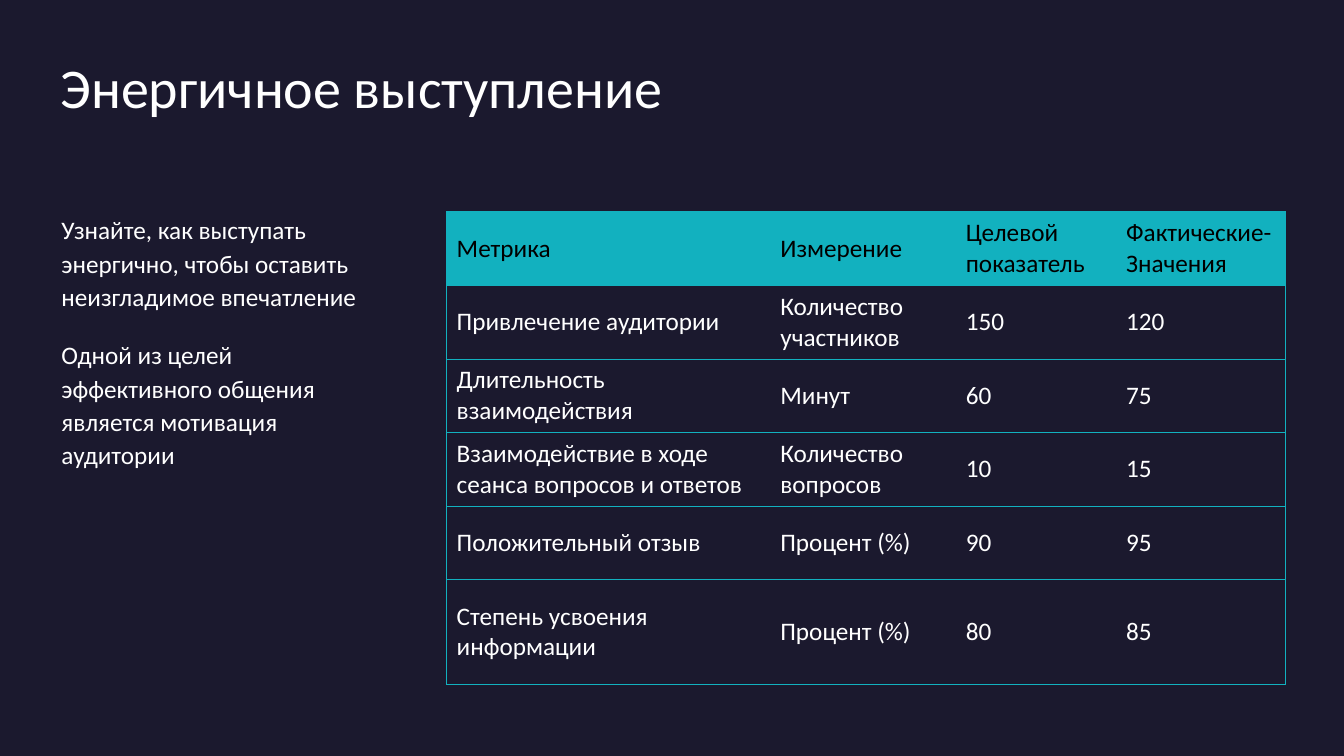
"""Build the slide on energetic delivery with its table of audience metrics."""
from lxml.etree import SubElement
from pptx import Presentation
from pptx.dml.color import RGBColor
from pptx.enum.text import MSO_ANCHOR, MSO_AUTO_SIZE, PP_ALIGN
from pptx.oxml.ns import qn
from pptx.util import Inches, Pt

HEADING = "Энергичное выступление"
ADVICE = [
    "Узнайте, как выступать энергично, чтобы оставить неизгладимое впечатление",
    "Одной из целей эффективного общения является мотивация аудитории",
]
METRICS = [
    ("Метрика", "Измерение", "Целевой показатель", "Фактические-Значения"),
    ("Привлечение аудитории", "Количество участников", "150", "120"),
    ("Длительность взаимодействия", "Минут", "60", "75"),
    ("Взаимодействие в ходе сеанса вопросов и ответов", "Количество вопросов", "10", "15"),
    ("Положительный отзыв", "Процент (%)", "90", "95"),
    ("Степень усвоения информации", "Процент (%)", "80", "85"),
]
COLUMN_WIDTHS = [3.21, 1.84, 1.59, 1.68]
ROW_HEIGHTS = [0.73] * 5 + [1.04]
FONT = "Calibri"
NIGHT, TEAL, WHITE, BLACK = "1B192E", "12B1BF", "FFFFFF", "000000"


def color(value):
    return RGBColor.from_string(value)


def write(paragraph, text, size, ink):
    run = paragraph.add_run()
    run.text = text
    run.font.name = FONT
    run.font.size = Pt(size)
    run.font.bold = False
    run.font.color.rgb = color(ink)


def place(placeholder, left, top, width, height, right_inset=0, bottom_inset=0):
    placeholder.left, placeholder.top = Inches(left), Inches(top)
    placeholder.width, placeholder.height = Inches(width), Inches(height)
    frame = placeholder.text_frame
    frame.margin_left = frame.margin_top = 0
    frame.margin_right, frame.margin_bottom = Inches(right_inset), Inches(bottom_inset)
    frame.vertical_anchor = MSO_ANCHOR.TOP
    frame.auto_size = MSO_AUTO_SIZE.NONE
    frame.word_wrap = True
    return frame


def set_borders(cell, left, right):
    properties = cell._tc.get_or_add_tcPr()
    for side, visible in (("L", left), ("R", right), ("T", True), ("B", True)):
        line = SubElement(properties, qn(f"a:ln{side}"), w=str(Pt(0.5)))
        if visible:
            fill = SubElement(line, qn("a:solidFill"))
            SubElement(fill, qn("a:srgbClr"), val=TEAL)
        else:
            SubElement(line, qn("a:noFill"))


def add_heading(slide):
    paragraph = place(slide.shapes.title, 0.6, 0.6, 12.13, 1.35).paragraphs[0]
    paragraph.alignment = PP_ALIGN.LEFT
    paragraph.line_spacing = 0.9
    write(paragraph, HEADING, 40, WHITE)


def add_advice(slide):
    frame = place(slide.placeholders[1], 0.61, 2.1, 3.19, 4.7, 0.1, 0.05)
    for index, text in enumerate(ADVICE):
        paragraph = frame.add_paragraph() if index else frame.paragraphs[0]
        properties = paragraph._p.get_or_add_pPr()
        properties.set("marL", "0")
        properties.set("indent", "0")
        SubElement(properties, qn("a:buNone"))
        paragraph.line_spacing = 1.1
        paragraph.space_before = Pt(10 if index else 0)
        paragraph.space_after = Pt(8)
        write(paragraph, text, 18, WHITE)


def add_metrics(slide):
    table = slide.shapes.add_table(
        len(METRICS), len(COLUMN_WIDTHS), Inches(4.43), Inches(2.1),
        Inches(sum(COLUMN_WIDTHS)), Inches(sum(ROW_HEIGHTS))).table
    table.horz_banding = False
    for column, width in zip(table.columns, COLUMN_WIDTHS):
        column.width = Inches(width)
    last = len(COLUMN_WIDTHS) - 1
    for row_index, (row, height, texts) in enumerate(zip(table.rows, ROW_HEIGHTS, METRICS)):
        row.height = Inches(height)
        background, ink = (NIGHT, WHITE) if row_index else (TEAL, BLACK)
        for column_index, (cell, text) in enumerate(zip(row.cells, texts)):
            set_borders(cell, column_index == 0, column_index == last)
            cell.fill.solid()
            cell.fill.fore_color.rgb = color(background)
            cell.vertical_anchor = MSO_ANCHOR.MIDDLE
            write(cell.text_frame.paragraphs[0], text, 18, ink)


def main():
    deck = Presentation()
    deck.slide_width, deck.slide_height = Inches(13.33), Inches(7.5)
    slide = deck.slides.add_slide(deck.slide_layouts[1])
    slide.background.fill.solid()
    slide.background.fill.fore_color.rgb = color(NIGHT)
    add_heading(slide)
    add_advice(slide)
    add_metrics(slide)
    deck.save("out.pptx")


if __name__ == "__main__":
    main()
